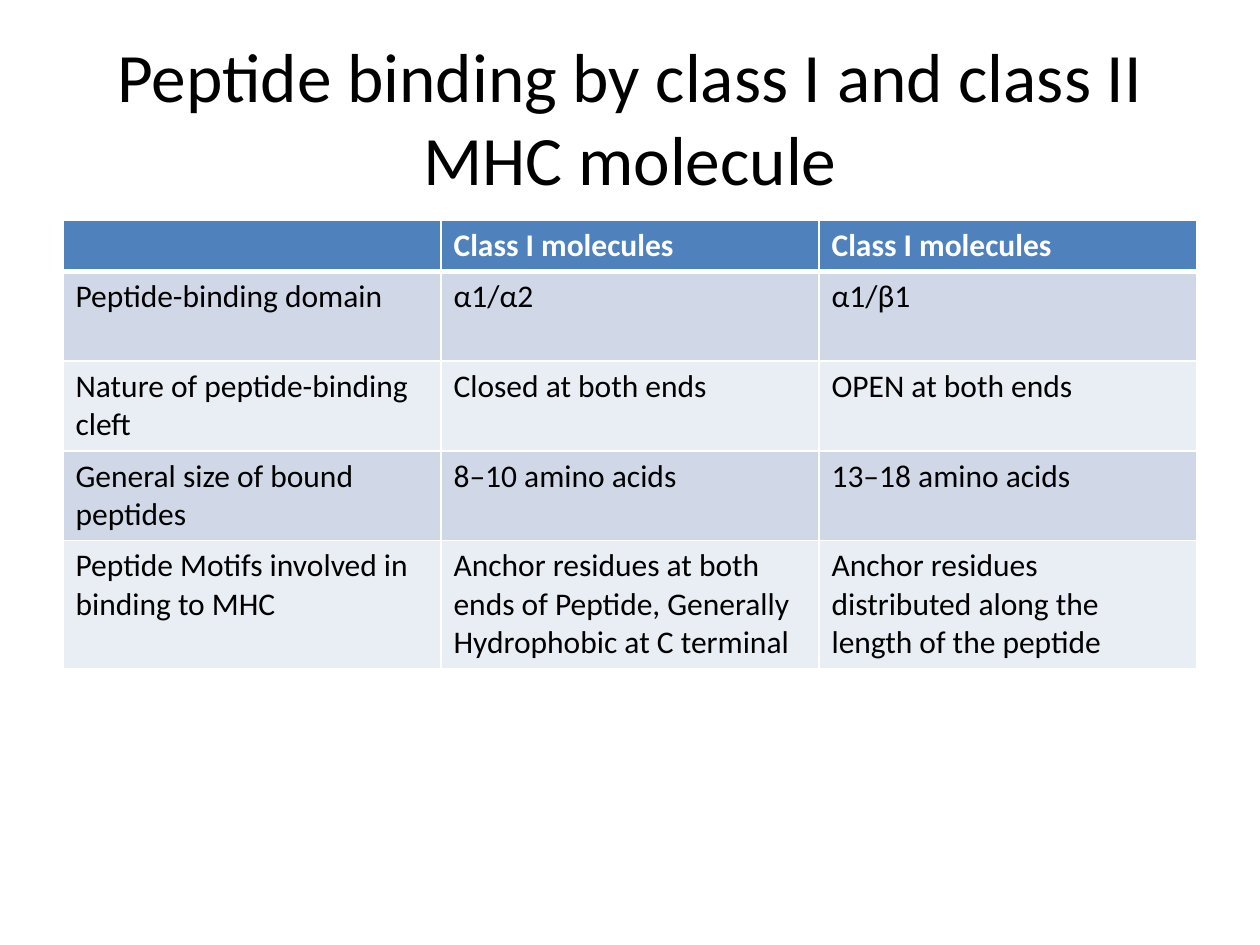
from lxml import etree
from pptx import Presentation
from pptx.dml.color import RGBColor
from pptx.enum import text
from pptx.oxml import ns
from pptx.util import Pt

FONT = "Calibri"
COLORS = {
    "header": "4F81BD",
    "odd": "D0D8E8",
    "even": "E9EDF4",
    "border": "FFFFFF",
    "header_text": "FFFFFF",
    "text": "000000",
}
ROW_HEIGHTS = [29.2, 51.2, 51.2, 51.2, 72.8]
COMPARISON = [
    ["", "Class I molecules", "Class I molecules"],
    ["Peptide-binding domain", "α1/α2", "α1/β1"],
    ["Nature of peptide-binding cleft", "Closed at both ends", "OPEN at both ends"],
    ["General size of bound peptides", "8–10 amino acids", "13–18 amino acids"],
    [
        "Peptide Motifs involved in binding to MHC",
        "Anchor residues at both ends of Peptide, Generally Hydrophobic at C terminal",
        "Anchor residues distributed along the length of the peptide",
    ],
]


def format_runs(frame, size, color, bold=False):
    """Apply one font style to every run of a text frame."""
    for paragraph in frame.paragraphs:
        for run in paragraph.runs:
            run.font.name = FONT
            run.font.size = Pt(size)
            run.font.bold = bold
            run.font.color.rgb = RGBColor.from_string(COLORS[color])


def add_borders(cell, widths):
    """Draw the cell borders, given a width in points for each side."""
    properties = cell._tc.get_or_add_tcPr()
    for side, width in widths.items():
        line = etree.SubElement(properties, ns.qn(f"a:ln{side}"), w=str(Pt(width)))
        fill = etree.SubElement(line, ns.qn("a:solidFill"))
        etree.SubElement(fill, ns.qn("a:srgbClr"), val=COLORS["border"])


def add_title(slide, wording):
    """Place and format the slide title."""
    title = slide.shapes.title
    title.left, title.top, title.width, title.height = Pt(36), Pt(21.6), Pt(648), Pt(90)
    frame = title.text_frame
    frame.text = wording
    frame.word_wrap = True
    frame.auto_size = text.MSO_AUTO_SIZE.NONE
    frame.vertical_anchor = text.MSO_ANCHOR.MIDDLE
    frame.paragraphs[0].alignment = text.PP_ALIGN.CENTER
    format_runs(frame, 39.6, "text")


def fill_cell(cell, wording, row):
    """Write one cell and style it by its row number."""
    is_header = row == 0
    cell.text_frame.text = wording
    format_runs(cell.text_frame, 18, "header_text" if is_header else "text", is_header)
    add_borders(cell, {"L": 1, "R": 1, "T": 3 if row == 1 else 1, "B": 3 if is_header else 1})
    band = "header" if is_header else ("odd" if row % 2 else "even")
    cell.fill.solid()
    cell.fill.fore_color.rgb = RGBColor.from_string(COLORS[band])


def add_comparison(slide, rows):
    """Add the banded table with three equal columns."""
    frame = slide.shapes.add_table(
        len(rows), len(rows[0]), Pt(36), Pt(126), Pt(648), Pt(sum(ROW_HEIGHTS))
    )
    table = frame.table
    for row, (wordings, height) in enumerate(zip(rows, ROW_HEIGHTS)):
        table.rows[row].height = Pt(height)
        for column, wording in enumerate(wordings):
            fill_cell(table.cell(row, column), wording, row)


def main():
    """Build and save the slide."""
    deck = Presentation()
    deck.slide_width, deck.slide_height = Pt(720), Pt(540)
    slide = deck.slides.add_slide(deck.slide_layouts[5])
    add_title(slide, "Peptide binding by class I and class II MHC molecule")
    add_comparison(slide, COMPARISON)
    deck.save("out.pptx")


if __name__ == "__main__":
    main()
